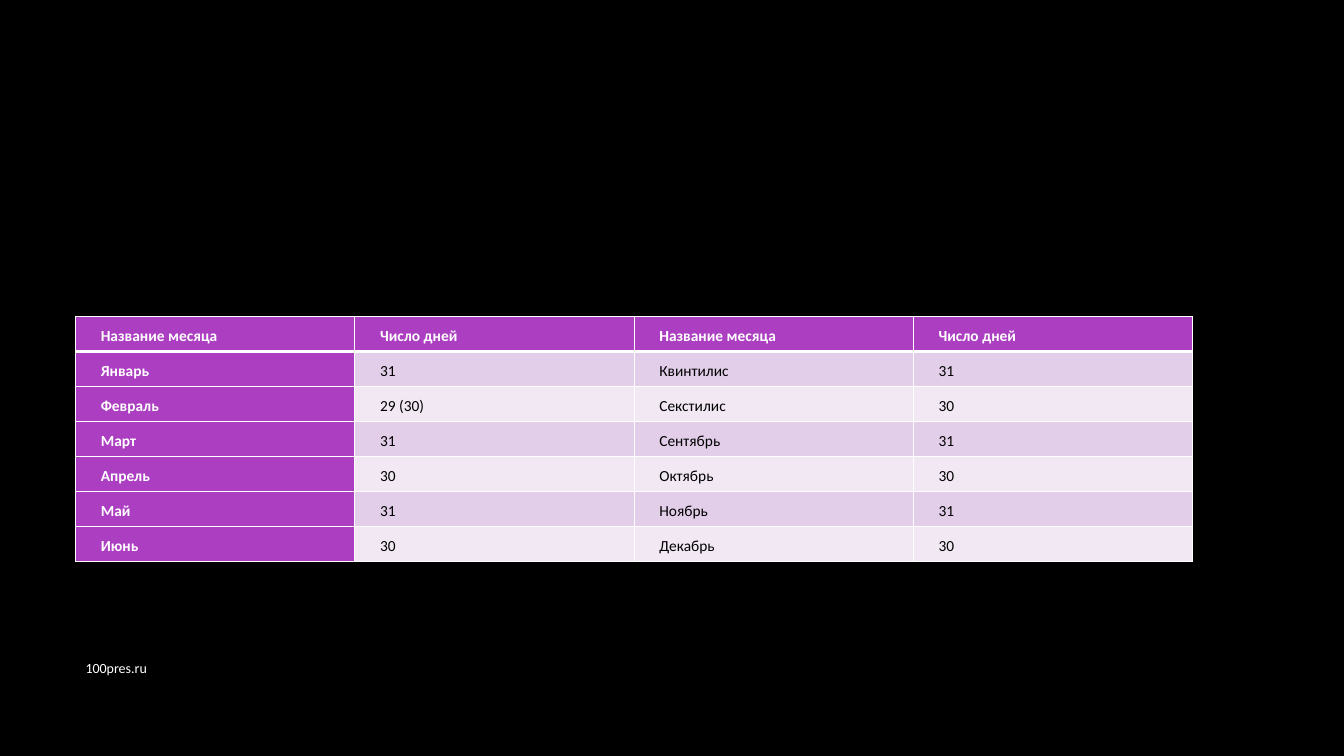
from lxml import etree
from pptx import Presentation
from pptx.dml.color import RGBColor
from pptx.enum.text import MSO_ANCHOR
from pptx.oxml.ns import qn
from pptx.util import Pt

TOP, MIDDLE = MSO_ANCHOR.TOP, MSO_ANCHOR.MIDDLE
BLANK = 6
COLORS = {
    "black": "000000",
    "white": "FFFFFF",
    "purple": "AC3EC1",
    "lilac": "E3CEE9",
    "pale": "F1E8F4",
}
MONTHS = [
    ("Название месяца", "Число дней", "Название месяца", "Число дней"),
    ("Январь", "31", "Квинтилис", "31"),
    ("Февраль", "29 (30)", "Секстилис", "30"),
    ("Март", "31", "Сентябрь", "31"),
    ("Апрель", "30", "Октябрь", "30"),
    ("Май", "31", "Ноябрь", "31"),
    ("Июнь", "30", "Декабрь", "30"),
]


def rgb(name):
    return RGBColor.from_string(COLORS[name])


def write(frame, text, size=11, color="white", bold=False, line=None, after=None):
    frame.word_wrap = True
    para = frame.paragraphs[0]
    para.line_spacing = line
    para.space_after = after
    run = para.add_run()
    run.text = text
    font = run.font
    font.name, font.size, font.bold = "Calibri", Pt(size), bold
    font.color.rgb = rgb(color)


def set_edges(cell, **widths):
    props = cell._tc.get_or_add_tcPr()
    for side in "LRTB":
        width = Pt(widths.get(side, 1))
        edge = etree.SubElement(props, qn(f"a:ln{side}"), w=str(width))
        fill = etree.SubElement(edge, qn("a:solidFill"))
        etree.SubElement(fill, qn("a:srgbClr"), val=COLORS["white"])


def add_table(slide, rows, left, top, col_width, row_height):
    count = len(rows[0])
    table = slide.shapes.add_table(
        len(rows), count, Pt(left), Pt(top),
        Pt(col_width * count), Pt(row_height * len(rows))).table
    for col in table.columns:
        col.width = Pt(col_width)
    for i, row in enumerate(rows):
        table.rows[i].height = Pt(row_height)
        for j, text in enumerate(row):
            cell = table.cell(i, j)
            head = i == 0 or j == 0
            # A thick rule parts the header from the body
            set_edges(cell, T=3 if i == 1 else 1, B=3 if i == 0 else 1)
            cell.fill.solid()
            band = "lilac" if i % 2 else "pale"
            cell.fill.fore_color.rgb = rgb("purple" if head else band)
            cell.margin_left, cell.margin_top = Pt(18), Pt(6.5)
            cell.margin_right, cell.margin_bottom = Pt(7.2), Pt(3.6)
            cell.vertical_anchor = TOP
            write(cell.text_frame, text, color="white" if head else "black",
                  bold=head, line=1.07, after=Pt(8))


def add_text(slide, text, left, top, width, height, **style):
    frame = slide.shapes.add_textbox(
        Pt(left), Pt(top), Pt(width), Pt(height)).text_frame
    frame.vertical_anchor = MIDDLE
    write(frame, text, **style)


def main():
    deck = Presentation()
    deck.slide_width, deck.slide_height = Pt(960), Pt(540)
    slide = deck.slides.add_slide(deck.slide_layouts[BLANK])
    slide.background.fill.solid()
    slide.background.fill.fore_color.rgb = rgb("black")

    # Months and their days
    add_table(slide, MONTHS, 54, 226, 199.5, 25)

    # Footer
    add_text(slide, "100pres.ru", 54, 462.5, 616, 29.5, size=10)

    deck.save("out.pptx")


if __name__ == "__main__":
    main()
